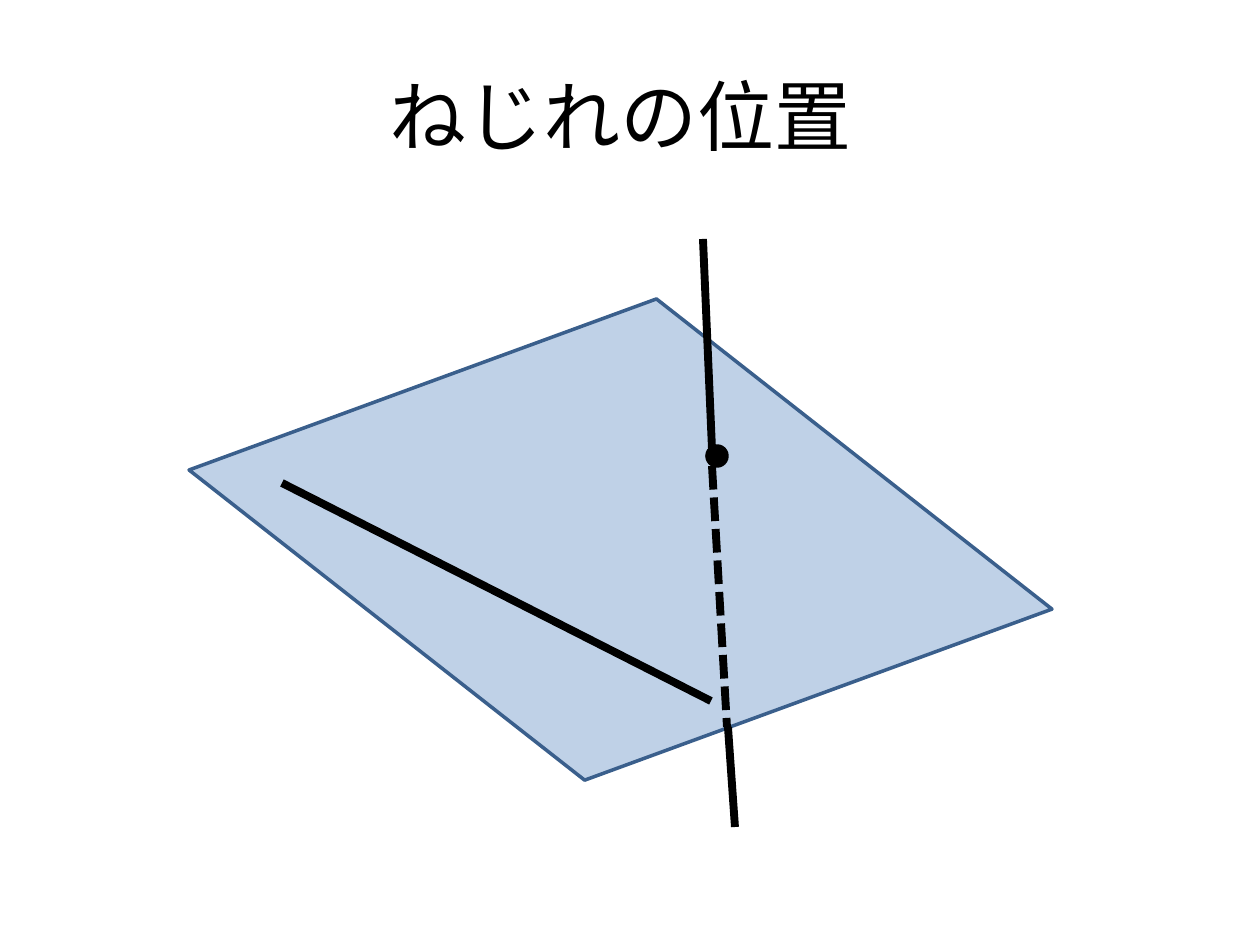
from dataclasses import dataclass

from lxml.etree import SubElement
from pptx import Presentation
from pptx.dml.color import RGBColor
from pptx.enum.dml import MSO_LINE
from pptx.enum.shapes import MSO_CONNECTOR, MSO_SHAPE
from pptx.enum.text import MSO_ANCHOR, PP_ALIGN
from pptx.oxml import parse_xml
from pptx.oxml.ns import nsdecls, qn
from pptx.util import Pt

EMU_PER_PX = 914400 / 126


@dataclass(frozen=True)
class Theme:
    """Colours, font and sizes of the slide."""
    ink: RGBColor = RGBColor(0, 0, 0)
    plane: RGBColor = RGBColor(0x4F, 0x81, 0xBD)
    plane_edge: RGBColor = RGBColor(0x3A, 0x5F, 0x8C)
    plane_alpha: int = 36000
    font: str = "Calibri"
    title_size: Pt = Pt(44)
    edge_width: Pt = Pt(2)
    line_width: Pt = Pt(4.5)


THEME = Theme()


def px(length):
    """Turn pixels into EMU."""
    return round(length * EMU_PER_PX)


def add_title(slide, box, wording):
    """Place the shadowed title in the box."""
    title = slide.shapes.title
    title.left, title.top, title.width, title.height = map(px, box)
    title.text_frame.vertical_anchor = MSO_ANCHOR.MIDDLE
    paragraph = title.text_frame.paragraphs[0]
    paragraph.alignment = PP_ALIGN.CENTER
    paragraph.font.name = THEME.font
    paragraph.font.size = THEME.title_size
    paragraph.font.color.rgb = THEME.ink
    run = paragraph.add_run()
    run.text = wording
    run._r.get_or_add_rPr().append(parse_xml(
        f'<a:effectLst {nsdecls("a")}>'
        '<a:outerShdw blurRad="38100" dist="38100" dir="2700000" algn="tl">'
        '<a:srgbClr val="000000"><a:alpha val="43000"/></a:srgbClr>'
        '</a:outerShdw></a:effectLst>'))


def add_figure(slide, kind, box, fill, edge):
    """Add a filled and outlined preset shape without shadow."""
    figure = slide.shapes.add_shape(kind, *map(px, box))
    figure.shadow.inherit = False
    figure.fill.solid()
    figure.fill.fore_color.rgb = fill
    figure.line.color.rgb = edge
    figure.line.width = THEME.edge_width
    return figure


def add_line(slide, start, end, dash=None):
    """Add a thick straight line without shadow."""
    line = slide.shapes.add_connector(
        MSO_CONNECTOR.STRAIGHT, *map(px, (*start, *end)))
    line.line.color.rgb = THEME.ink
    line.line.width = THEME.line_width
    if dash is not None:
        line.line.dash_style = dash
    SubElement(line._element.spPr, qn("a:effectLst"))


def add_skew_lines(slide, box):
    """Draw a plane, a line lying in it and a line piercing it."""
    left, top, width, height = box

    def at(x, y):
        return left + x, top + y

    plane = add_figure(slide, MSO_SHAPE.PARALLELOGRAM, (*at(50, 89), 765, 423),
                       THEME.plane, THEME.plane_edge)
    plane.adjustments[0] = 0.62
    plane.rotation = 218.1
    plane_colour = plane._element.spPr.find(qn("a:solidFill"))[0]
    SubElement(plane_colour, qn("a:alpha"), val=str(THEME.plane_alpha))

    add_line(slide, at(94, 244), at(523, 462))
    add_line(slide, at(515, 0), at(524, 210))
    add_line(slide, at(524, 227), at(539, 488), MSO_LINE.SQUARE_DOT)
    add_line(slide, at(540, 488), at(547, height))
    add_figure(slide, MSO_SHAPE.FLOWCHART_CONNECTOR, (*at(519, 207), 20, 20),
               THEME.ink, THEME.ink)


def main():
    """Build and save the slide."""
    presentation = Presentation()
    presentation.slide_width = px(1260)
    presentation.slide_height = px(945)
    slide = presentation.slides.add_slide(presentation.slide_layouts[5])
    add_title(slide, (54, 36, 1134, 158), "ねじれの位置")
    add_skew_lines(slide, (188, 239, 864, 588))
    presentation.save("out.pptx")


if __name__ == "__main__":
    main()
